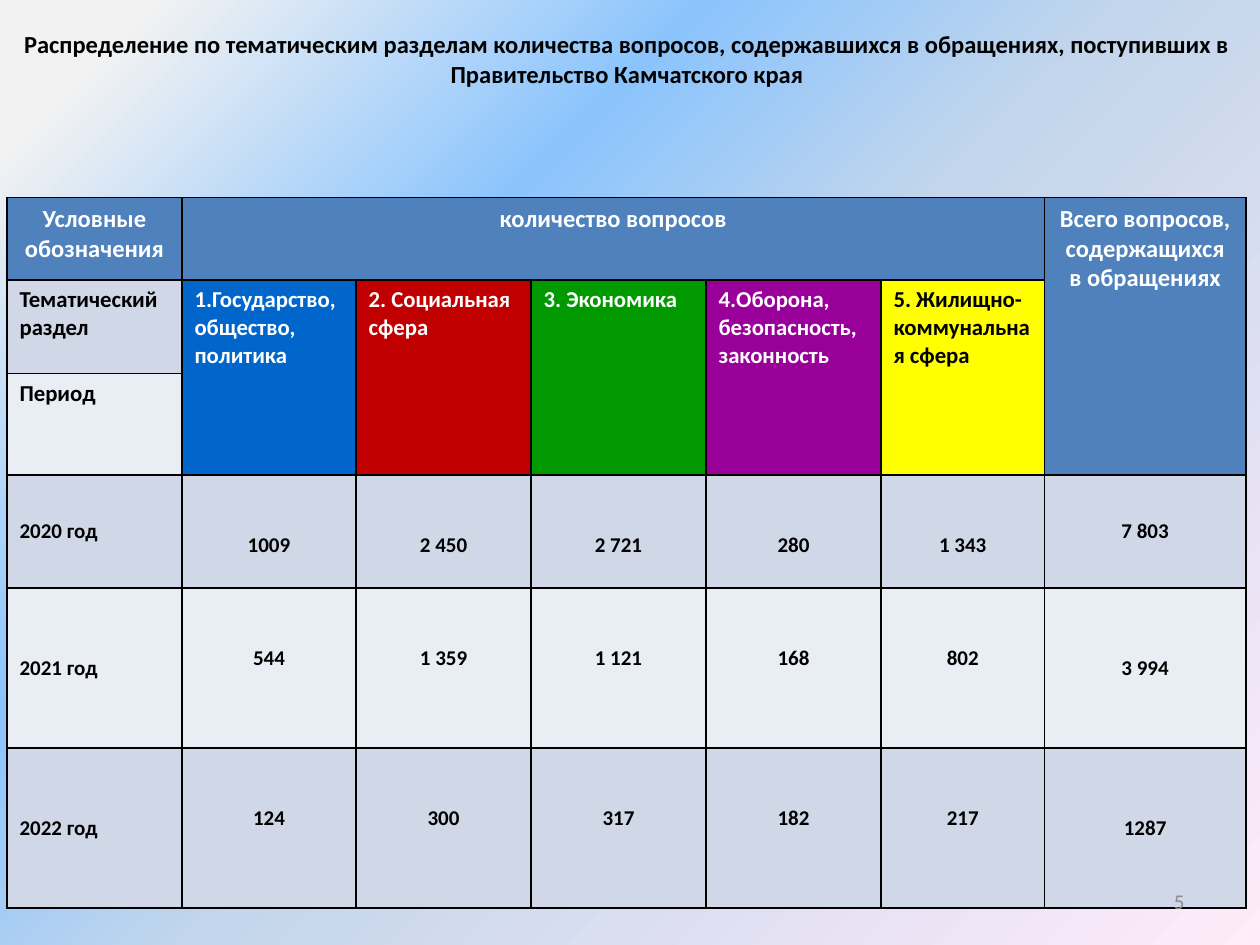
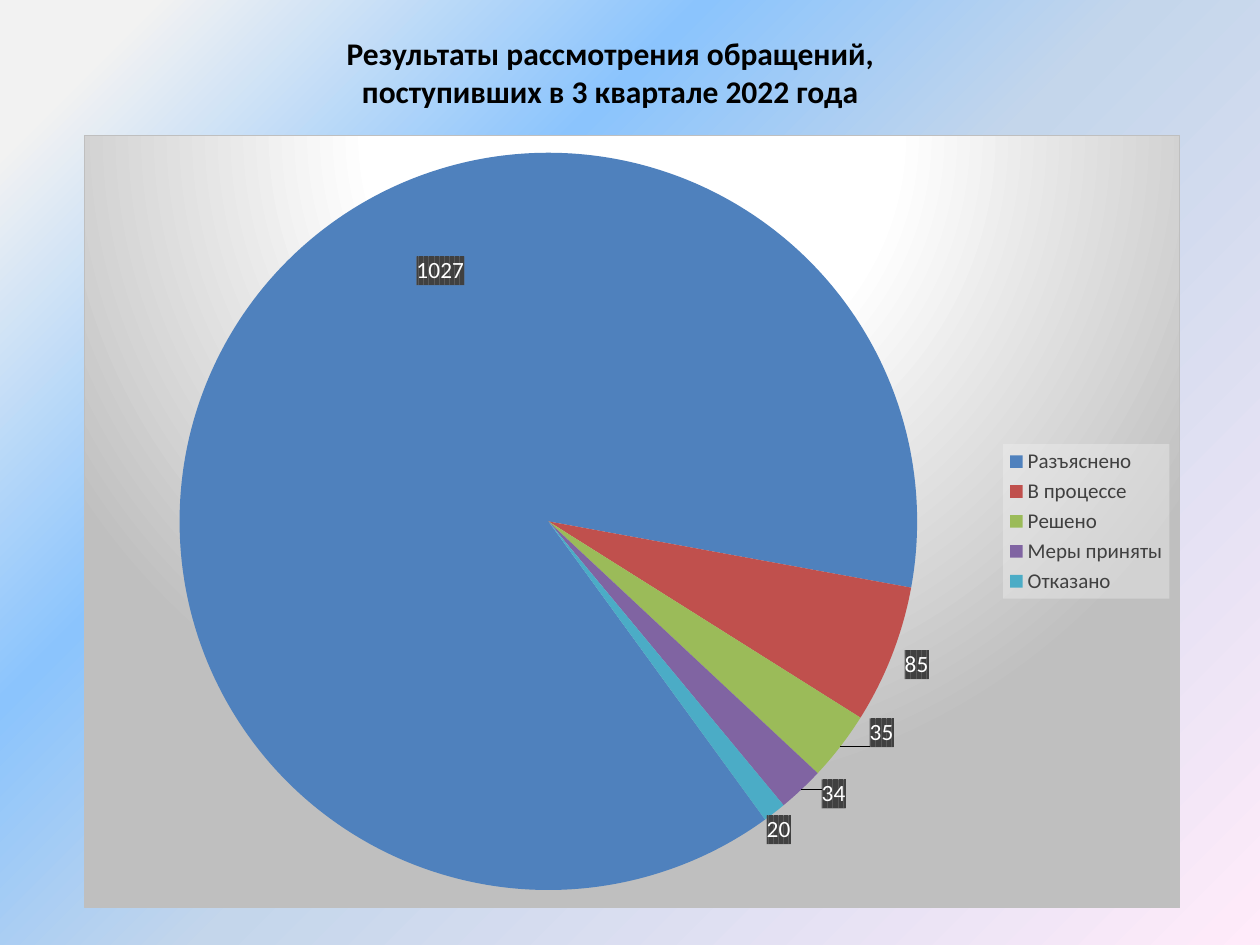
from math import cos, radians, sin

from pptx import Presentation
from pptx.chart.data import CategoryChartData
from pptx.dml.color import RGBColor
from pptx.enum.chart import XL_CHART_TYPE as ChartType, XL_LABEL_POSITION as LabelPosition
from pptx.enum.chart import XL_LEGEND_POSITION as LegendPosition
from pptx.enum.text import MSO_ANCHOR as Anchor, PP_ALIGN as Align
from pptx.oxml import parse_xml
from pptx.oxml.ns import nsdecls, qn
from pptx.util import Pt

FONT = "Calibri"
BLACK = RGBColor(0x00, 0x00, 0x00)
WHITE = RGBColor(0xFF, 0xFF, 0xFF)
PAGE_GREY = RGBColor(0x8C, 0x8C, 0x8C)
LEGEND_GREY = RGBColor(0x40, 0x40, 0x40)
HEADER_BLUE = RGBColor(0x4F, 0x81, 0xBD)
BAND_DARK = RGBColor(0xD0, 0xD8, 0xE8)
BAND_LIGHT = RGBColor(0xE9, 0xED, 0xF4)
STATE_BLUE = RGBColor(0x00, 0x66, 0xCC)
SOCIAL_RED = RGBColor(0xC0, 0x00, 0x00)
ECONOMY_GREEN = RGBColor(0x00, 0x99, 0x00)
DEFENCE_PURPLE = RGBColor(0x99, 0x00, 0x99)
HOUSING_YELLOW = RGBColor(0xFF, 0xFF, 0x00)
SLICE_COLORS = [HEADER_BLUE, RGBColor(0xC0, 0x50, 0x4D), RGBColor(0x9B, 0xBB, 0x59),
                RGBColor(0x80, 0x64, 0xA2), RGBColor(0x4B, 0xAC, 0xC6)]


def write(frame, lines, size, color=BLACK, bold=True, align=Align.CENTER):
    """Fill a text frame with one styled paragraph per line."""
    frame.word_wrap = True
    for index, line in enumerate(lines):
        paragraph = frame.add_paragraph() if index else frame.paragraphs[0]
        paragraph.alignment = align
        run = paragraph.add_run()
        run.text = line
        for name, value in {"name": FONT, "size": Pt(size), "bold": bold}.items():
            setattr(run.font, name, value)
        run.font.color.rgb = color


def gradient(stops, direction):
    """Build a gradient fill from (percent, colour) stops."""
    marks = "".join(f'<a:gs pos="{percent * 1000}"><a:srgbClr val="{color}"/></a:gs>'
                    for percent, color in stops)
    return (f'<a:gradFill {nsdecls("a")} rotWithShape="1"><a:gsLst>{marks}</a:gsLst>'
            f'{direction}</a:gradFill>')


presentation = Presentation()
presentation.slide_width, presentation.slide_height = Pt(720), Pt(540)
blank = presentation.slide_layouts[6]

# Shared background on the master
master = presentation.slide_master
master.background.fill.solid()
background = master.element.find(".//" + qn("p:bgPr"))
background.replace(background[0], parse_xml(gradient(
    [(7, "F2F2F2"), (32, "8BC4FD"), (52, "C4D6EB"), (100, "FFEBFA")],
    '<a:lin ang="2700000" scaled="0"/>')))

# Slide 1: title
slide = presentation.slides.add_slide(blank)
title = slide.shapes.add_textbox(Pt(-5), Pt(-21.6), Pt(726.5), Pt(113.8)).text_frame
title.vertical_anchor = Anchor.MIDDLE
title.margin_bottom = Pt(7)
write(title, ["Распределение по тематическим разделам количества вопросов, содержавшихся "
              "в обращениях, поступивших в Правительство Камчатского края"], 14)

# Slide 1: table grid
column_widths = [100, 99.5, 100, 100, 100, 93.5, 115]
row_heights = [47, 53.5, 58, 64.5, 91.5, 91.5]
table = slide.shapes.add_table(len(row_heights), len(column_widths), Pt(4), Pt(113),
                               Pt(sum(column_widths)), Pt(sum(row_heights))).table
table.first_row = table.horz_banding = False
for column, width in zip(table.columns, column_widths):
    column.width = Pt(width)
for row, height in zip(table.rows, row_heights):
    row.height = Pt(height)
row_fills = [HEADER_BLUE, BAND_DARK, BAND_LIGHT, BAND_DARK, BAND_LIGHT, BAND_DARK]
for row, fill in zip(table.rows, row_fills):
    for cell in row.cells:
        properties = cell._tc.get_or_add_tcPr()
        for side in ("lnL", "lnR", "lnT", "lnB"):
            properties.append(parse_xml(
                f'<a:{side} {nsdecls("a")} w="12700"><a:solidFill>'
                f'<a:srgbClr val="{BLACK}"/></a:solidFill></a:{side}>'))
        cell.fill.solid()
        cell.fill.fore_color.rgb = fill

# Slide 1: table headings
table.cell(0, 1).merge(table.cell(0, 5))
table.cell(0, 6).merge(table.cell(2, 6))
for column, text in {0: "Условные обозначения", 1: "количество вопросов",
                     6: "Всего вопросов, содержащихся в обращениях"}.items():
    write(table.cell(0, column).text_frame, [text], 14, WHITE)
for row, text in {1: "Тематический раздел", 2: "Период"}.items():
    write(table.cell(row, 0).text_frame, [text], 13, align=Align.LEFT)
sections = [
    ("1.Государство, общество, политика", STATE_BLUE, WHITE),
    ("2. Социальная сфера", SOCIAL_RED, WHITE),
    ("3. Экономика", ECONOMY_GREEN, WHITE),
    ("4.Оборона, безопасность, законность", DEFENCE_PURPLE, WHITE),
    ("5. Жилищно-коммунальная сфера", HOUSING_YELLOW, BLACK),
]
for column, (text, fill, color) in enumerate(sections, 1):
    cell = table.cell(1, column)
    cell.merge(table.cell(2, column))
    cell.fill.fore_color.rgb = fill
    write(cell.text_frame, [text], 13, color, align=Align.LEFT)

# Slide 1: yearly counts
years = [
    ["2020 год", "1009", "2 450", "2 721", "280", "1 343", "7 803"],
    ["2021 год", "544", "1 359", "1 121", "168", "802", "3 994"],
    ["2022 год", "124", "300", "317", "182", "217", "1287"],
]
for row, values in enumerate(years, 3):
    for column, value in enumerate(values):
        cell = table.cell(row, column)
        if column in (0, 6):
            cell.vertical_anchor = Anchor.MIDDLE
        else:
            cell.margin_top = Pt(33)
        write(cell.text_frame, [value], 12, align=Align.CENTER if column else Align.LEFT)

# Slide 1: page number
page_number = slide.shapes.add_textbox(Pt(516), Pt(500.5), Pt(168), Pt(29)).text_frame
page_number.vertical_anchor = Anchor.MIDDLE
write(page_number, ["5"], 12, PAGE_GREY, bold=False, align=Align.RIGHT)

# Slide 2: title
slide = presentation.slides.add_slide(blank)
title = slide.shapes.add_textbox(Pt(65.5), Pt(16), Pt(566.5), Pt(51)).text_frame
write(title, ["Результаты рассмотрения обращений,", "поступивших в 3 квартале 2022 года"], 18)

# Slide 2: pie chart
shares = [87, 6, 3, 2, 1]
data = CategoryChartData()
data.categories = ["Разъяснено", "В процессе", "Решено", "Меры приняты", "Отказано"]
data.add_series("Series 1", shares)
left, top, width, height = 48, 77, 626.5, 442
chart = slide.shapes.add_chart(ChartType.PIE, Pt(left), Pt(top), Pt(width), Pt(height), data).chart
chart.has_title = False
for name, value in {"name": FONT, "size": Pt(10)}.items():
    setattr(chart.font, name, value)
chart.font.color.rgb = BLACK
plot = chart.plots[0]
plot.vary_by_categories = True

# Slide 2: chart background
chart_fill = gradient([(0, "FFFFFF"), (39, "FFFFFF"), (100, "BFBFBF")],
                      '<a:path path="circle"><a:fillToRect l="50000" t="-80000" '
                      'r="50000" b="180000"/></a:path>')
chart.element.find(qn("c:chart")).addnext(parse_xml(
    f'<c:spPr {nsdecls("c", "a")}>{chart_fill}<a:ln w="9525"><a:solidFill>'
    '<a:srgbClr val="BFBFBF"/></a:solidFill></a:ln></c:spPr>'))

# Slide 2: plot position and first slice angle
center_x, center_y, radius, start_angle = 313.3, 298, 211, 144
plot_area = chart.element.find(".//" + qn("c:plotArea"))
for layout in plot_area.findall(qn("c:layout")):
    plot_area.remove(layout)
frame = {"x": (center_x - radius - left) / width, "y": (center_y - radius - top) / height,
         "w": 2 * radius / width, "h": 2 * radius / height}
plot_area.insert(0, parse_xml(
    f'<c:layout {nsdecls("c")}><c:manualLayout><c:layoutTarget val="inner"/>'
    '<c:xMode val="edge"/><c:yMode val="edge"/>'
    + "".join(f'<c:{key} val="{value:.4f}"/>' for key, value in frame.items())
    + '</c:manualLayout></c:layout>'))
pie = plot_area.find(qn("c:pieChart"))
for angle in pie.findall(qn("c:firstSliceAng")):
    pie.remove(angle)
pie.append(parse_xml(f'<c:firstSliceAng {nsdecls("c")} val="{start_angle}"/>'))

# Slide 2: slices and labels, each label shifted from the middle of its slice
labels = [("1027", 251.5, 154.5), ("85", 524, 380), ("35", 504, 419),
          ("34", 476.5, 454), ("20", 445, 474.5)]
degrees = 360 / sum(shares)
for index, (text, label_x, label_y) in enumerate(labels):
    point = plot.series[0].points[index]
    point.format.fill.solid()
    point.format.fill.fore_color.rgb = SLICE_COLORS[index]
    label = point.data_label
    write(label.text_frame, [text], 13.3, WHITE, bold=False)
    label.position = LabelPosition.CENTER
    middle = radians(start_angle + degrees * (sum(shares[:index]) + shares[index] / 2))
    shift_x = (label_x - center_x - radius / 2 * sin(middle)) / width
    shift_y = (label_y - center_y + radius / 2 * cos(middle)) / height
    label_xml = label._dLbl
    for layout in label_xml.findall(qn("c:layout")):
        label_xml.remove(layout)
    label_xml.find(qn("c:idx")).addnext(parse_xml(
        f'<c:layout {nsdecls("c")}><c:manualLayout><c:x val="{shift_x:.4f}"/>'
        f'<c:y val="{shift_y:.4f}"/></c:manualLayout></c:layout>'))
    label_xml.find(qn("c:tx")).addnext(parse_xml(
        f'<c:spPr {nsdecls("c", "a")}><a:pattFill prst="dkVert"><a:fgClr>'
        '<a:srgbClr val="404040"/></a:fgClr><a:bgClr><a:srgbClr val="595959"/></a:bgClr>'
        '</a:pattFill></c:spPr>'))

# Slide 2: legend
chart.has_legend = True
legend = chart.legend
legend.position = LegendPosition.RIGHT
legend.include_in_layout = False
for name, value in {"name": FONT, "size": Pt(12)}.items():
    setattr(legend.font, name, value)
legend.font.color.rgb = LEGEND_GREY
legend._element.find(qn("c:txPr")).addprevious(parse_xml(
    f'<c:spPr {nsdecls("c", "a")}><a:solidFill><a:srgbClr val="F2F2F2">'
    '<a:alpha val="39000"/></a:srgbClr></a:solidFill></c:spPr>'))

presentation.save("out.pptx")
